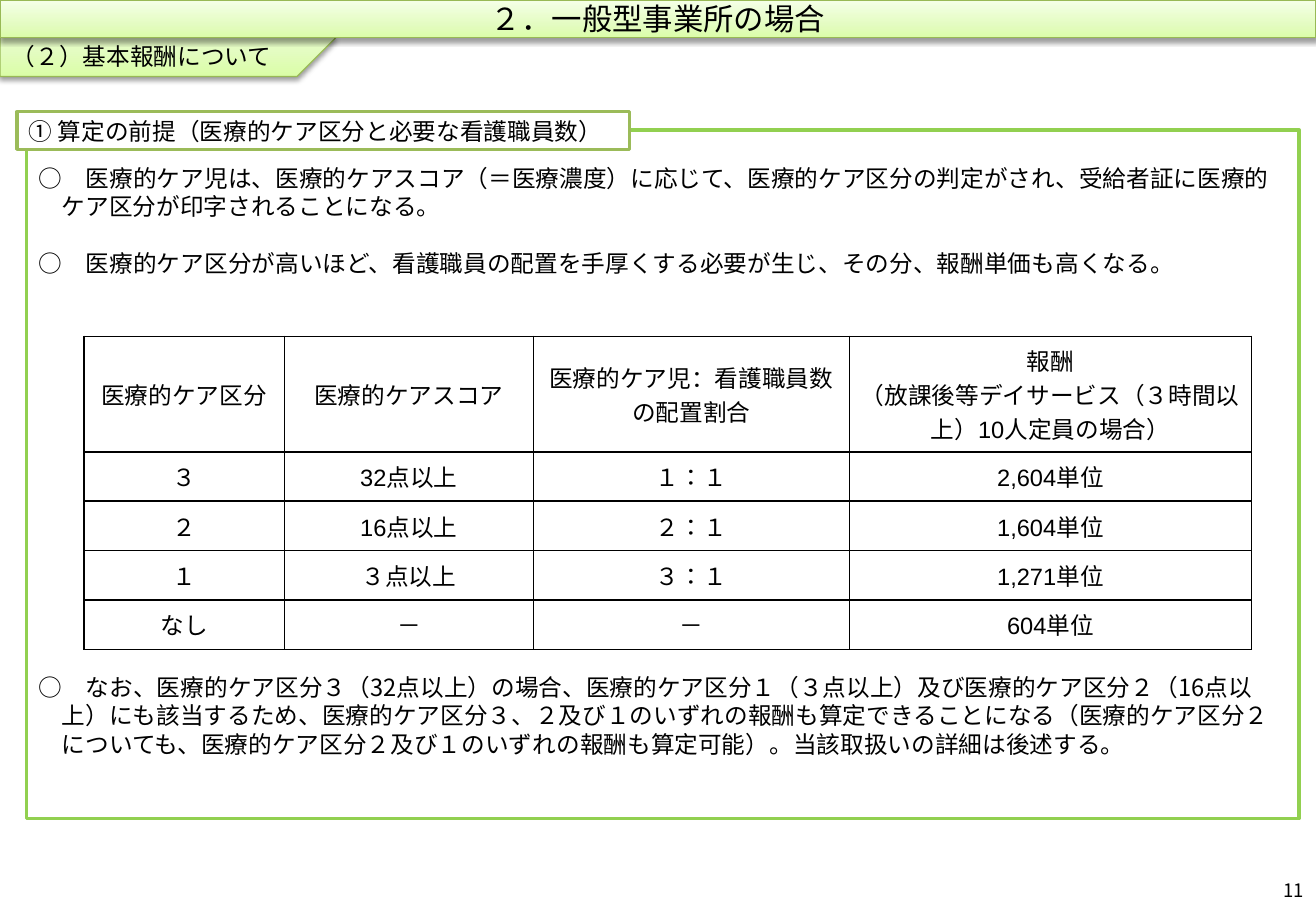
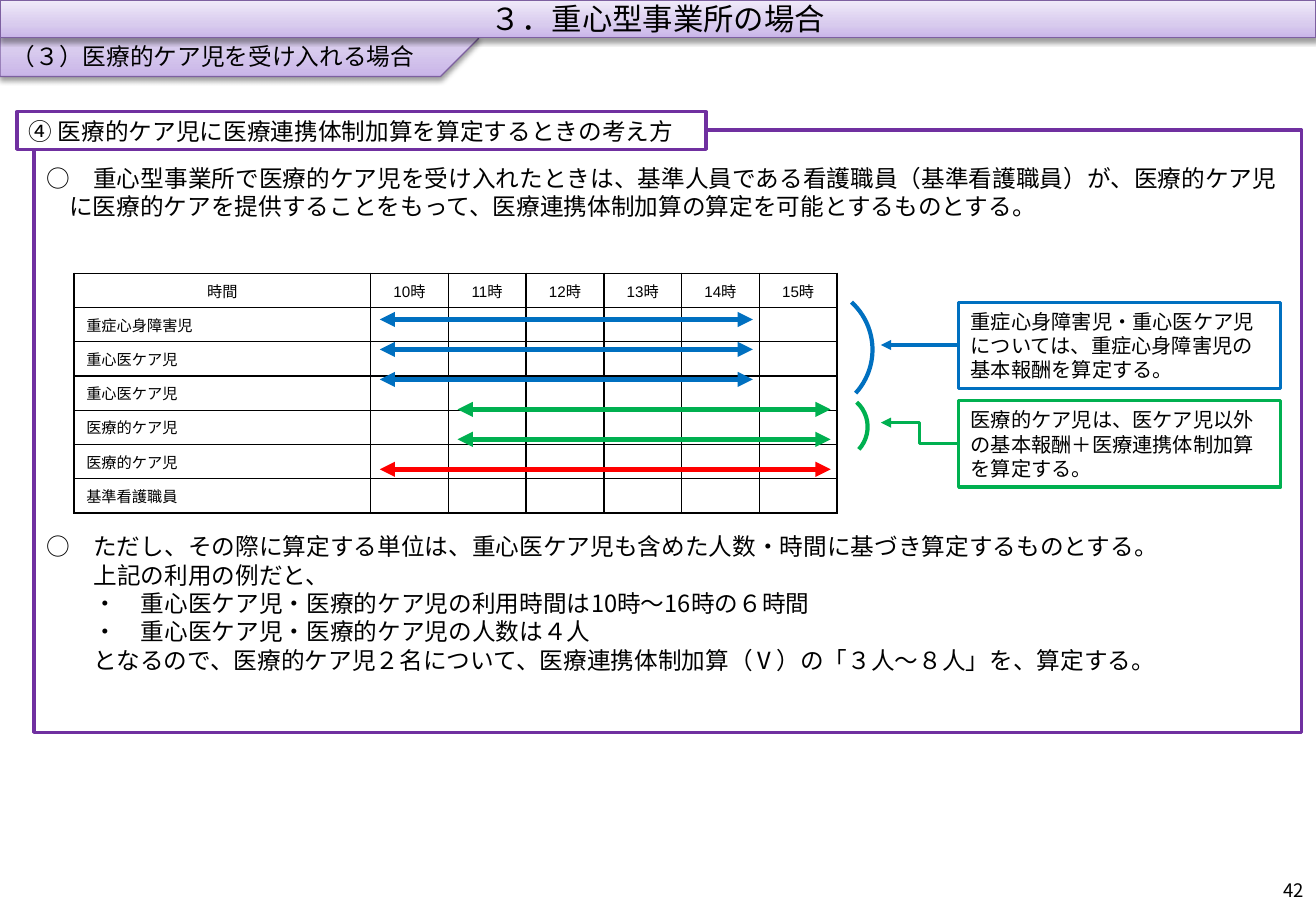
from copy import deepcopy
from lxml.etree import SubElement as Sub
from pptx import Presentation
from pptx.dml.color import RGBColor as RGB
from pptx.enum.shapes import MSO_CONNECTOR as LINK, MSO_SHAPE as FORM
from pptx.enum.text import MSO_ANCHOR as ANCHOR, PP_ALIGN as ALIGN
from pptx.oxml.ns import qn
from pptx.util import Inches, Pt

BLACK = RGB(0x00, 0x00, 0x00)
WHITE = RGB(0xFF, 0xFF, 0xFF)
BLUE = RGB(0x00, 0x70, 0xC0)
GREEN = RGB(0x00, 0xB0, 0x50)
RED = RGB(0xFF, 0x00, 0x00)
LIME = RGB(0x92, 0xD0, 0x50)
OLIVE = RGB(0x9B, 0xBB, 0x59)
PURPLE = RGB(0x70, 0x30, 0xA0)
LEAF = (RGB(0xDA, 0xFD, 0xA7), RGB(0xE4, 0xFC, 0xC2), RGB(0xF5, 0xFF, 0xE7), RGB(0x98, 0xB9, 0x55))
LILAC = (RGB(0xC9, 0xB5, 0xE8), RGB(0xD8, 0xCB, 0xEE), RGB(0xF0, 0xEA, 0xF9), RGB(0x7D, 0x60, 0xA0))
SANS = "Noto Sans CJK JP"
BAR = 4.13


class Deck:
    def __init__(self):
        self.file = Presentation()
        self.file.slide_width = Inches(10.83)
        self.file.slide_height = Inches(7.5)
        self.col = self.file.slide_width / 100
        self.row = self.file.slide_height / 100

    def grid(self, x, y, *size):
        pairs = zip((x, y, *size), (self.col, self.row) * 2)
        return [round(n * unit) for n, unit in pairs]

    def start(self, title, topic, width, theme, page):
        self.slide = self.file.slides.add_slide(self.file.slide_layouts[6])
        self.shapes = self.slide.shapes
        self.band((0, 0, width, 8.4), FORM.PENTAGON, theme, topic, anchor=ANCHOR.BOTTOM)
        self.band((0, 0, 100, BAR), FORM.RECTANGLE, theme, title, size=18, align=ALIGN.CENTER)
        note = self.shapes.add_textbox(*self.grid(76.82, 95.47, 23.18, 4.53))
        self.words(note.text_frame, page, size=11, align=ALIGN.RIGHT)

    def style(self, para, size, font, align, pitch=True):
        para.alignment = align
        if pitch:
            para.line_spacing = Pt(size * 1.2)
        for run in para.runs:
            run.font.size, run.font.name = Pt(size), font
            run.font.color.rgb = BLACK
            Sub(run._r.get_or_add_rPr(), qn("a:ea"), typeface=SANS)

    def words(self, frame, text, size=14, font=SANS, align=ALIGN.LEFT, anchor=ANCHOR.MIDDLE):
        frame.word_wrap = True
        frame.vertical_anchor = anchor
        frame.text = text
        for para in frame.paragraphs:
            self.style(para, size, font, align)

    def shape(self, box, form, line, weight, fill=None):
        item = self.shapes.add_shape(form, *self.grid(*box))
        item.shadow.inherit = False
        item.line.color.rgb, item.line.width = line, Pt(weight)
        if fill is None:
            item.fill.background()
        else:
            item.fill.solid()
            item.fill.fore_color.rgb = fill
        return item

    def band(self, box, form, theme, text, **style):
        low, mid, high, edge = theme
        item = self.shape(box, form, edge, 0.75)
        item.fill.gradient()
        item.fill.gradient_angle = 90
        stops = item._element.spPr.xpath("a:gradFill/a:gsLst")[0]
        stops.insert(1, deepcopy(stops[0]))
        for stop, color, place in zip(item.fill.gradient_stops, (low, mid, high), (0, 0.35, 1)):
            stop.color.rgb, stop.position = color, place
        glow = item._element.spPr.find(qn("a:effectLst"))
        shade = Sub(glow, qn("a:outerShdw"), blurRad="40000", dist="20000", dir="5400000", rotWithShape="0")
        Sub(Sub(shade, qn("a:srgbClr"), val=str(BLACK)), qn("a:alpha"), val="38000")
        self.words(item.text_frame, text, **style)

    def box(self, box, line, text, **style):
        item = self.shape(box, FORM.RECTANGLE, line, 2, WHITE)
        self.words(item.text_frame, text, **style)

    def panel(self, box, line, paras):
        frame = self.shape(box, FORM.RECTANGLE, line, 2).text_frame
        frame.margin_top, frame.margin_bottom = Inches(0.28), Inches(0.08)
        self.words(frame, "\n".join(text for text, *_ in paras), anchor=ANCHOR.TOP)
        for para, (_, left, hang, gap) in zip(frame.paragraphs, paras):
            para.space_before = Pt(gap)
            props = para._p.get_or_add_pPr()
            props.set("marL", str(int(Inches(left))))
            props.set("indent", str(-int(Inches(hang))))

    def table(self, x, y, cols, rows, data, size, pad, first=ALIGN.CENTER):
        spot = self.grid(x, y, sum(cols), sum(rows))
        table = self.shapes.add_table(len(rows), len(cols), *spot).table
        table.first_row = table.horz_banding = False
        for col, width in zip(table.columns, cols):
            col.width = round(width * self.col)
        for row, height in zip(table.rows, rows):
            row.height = round(height * self.row)
        for r, line in enumerate(data):
            for c, text in enumerate(line):
                align = first if r and not c else ALIGN.CENTER
                self.cell(table.cell(r, c), text, size, pad, align)

    def cell(self, cell, text, size, pad, align):
        cell.vertical_anchor = ANCHOR.MIDDLE
        cell.margin_left = cell.margin_right = Inches(pad)
        props = cell._tc.get_or_add_tcPr()
        for side in "LRTB":
            edge = Sub(props, qn("a:ln" + side), w=str(int(Pt(1))))
            Sub(Sub(edge, qn("a:solidFill")), qn("a:srgbClr"), val=str(BLACK))
        cell.fill.solid()
        cell.fill.fore_color.rgb = WHITE
        cell.text_frame.text = text
        for para in cell.text_frame.paragraphs:
            self.style(para, size, "Arial", align, pitch=False)
            if not text:
                para._p.get_or_add_endParaRPr().set("sz", str(size * 100))

    def arrow(self, start, end, color, weight=2, both=False, kind=LINK.STRAIGHT):
        link = self.shapes.add_connector(kind, *self.grid(*start, *end))
        link.line.color.rgb, link.line.width = color, Pt(weight)
        props = link._element.spPr
        for tip in ("headEnd", "tailEnd")[0 if both else 1:]:
            Sub(props.find(qn("a:ln")), qn("a:" + tip), type="triangle")
        Sub(props, qn("a:effectLst"))

    def arc(self, box, color):
        self.shape(box, FORM.ARC, color, 2.5).rotation = 42.4


def basic(deck):
    deck.start("２．一般型事業所の場合", "（２）基本報酬について", 25.48, LEAF, "11")
    deck.panel((2.03, 14.27, 96.68, 75.6), LIME, [
        ("○　医療的ケア児は、医療的ケアスコア（＝医療濃度）に応じて、医療的ケア区分の判定がされ、"
         "受給者証に医療的ケア区分が印字されることになる。", 0.19, 0.19, 0),
        ("○　医療的ケア区分が高いほど、看護職員の配置を手厚くする必要が生じ、その分、報酬単価も高くなる。",
         0.19, 0.19, 16.8),
        ("○　なお、医療的ケア区分３（32点以上）の場合、医療的ケア区分１（３点以上）及び医療的ケア区分２"
         "（16点以上）にも該当するため、医療的ケア区分３、２及び１のいずれの報酬も算定できることになる"
         "（医療的ケア区分２についても、医療的ケア区分２及び１のいずれの報酬も算定可能）。"
         "当該取扱いの詳細は後述する。", 0.19, 0.19, 234.4)])
    deck.box((1.29, 12.27, 46.54, BAR), OLIVE, "① 算定の前提（医療的ケア区分と必要な看護職員数）")
    deck.table(6.37, 36.93, [15.24, 18.93, 24.01, 30.56], [12.67] + [5.42] * 4, [
        ("医療的ケア区分", "医療的ケアスコア", "医療的ケア児：看護職員数\nの配置割合",
         "報酬\n（放課後等デイサービス（３時間以上）10人定員の場合）"),
        ("３", "32点以上", "１：１", "2,604単位"),
        ("２", "16点以上", "２：１", "1,604単位"),
        ("１", "３点以上", "３：１", "1,271単位"),
        ("なし", "－", "－", "604単位")], 14, 0.08)


def severe(deck):
    deck.start("３．重心型事業所の場合", "（３）医療的ケア児を受け入れる場合", 36.38, LILAC, "42")
    deck.panel((2.59, 14.27, 96.31, 66.13), PURPLE, [
        ("○　重心型事業所で医療的ケア児を受け入れたときは、基準人員である看護職員（基準看護職員）が、"
         "医療的ケア児に医療的ケアを提供することをもって、医療連携体制加算の算定を可能とするものとする。",
         0.19, 0.19, 0),
        ("○　ただし、その際に算定する単位は、重心医ケア児も含めた人数・時間に基づき算定するものとする。",
         0.39, 0.39, 184.7),
        ("上記の利用の例だと、", 0.39, 0, 0),
        ("・　重心医ケア児・医療的ケア児の利用時間は10時～16時の６時間", 0.39, 0, 0),
        ("・　重心医ケア児・医療的ケア児の人数は４人", 0.39, 0, 0),
        ("となるので、医療的ケア児２名について、医療連携体制加算（Ⅴ）の「３人～８人」を、算定する。",
         0.39, 0, 0)])
    deck.box((1.29, 12.27, 52.35, BAR), PURPLE, "④ 医療的ケア児に医療連携体制加算を算定するときの考え方")

    left, name, hour = 5.63, 22.53, 5.91
    staff = ["重症心身障害児", "重心医ケア児", "重心医ケア児", "医療的ケア児", "医療的ケア児", "基準看護職員"]
    data = [["時間"] + [f"{h}時" for h in range(10, 16)]] + [[who] + [""] * 6 for who in staff]
    deck.table(left, 30, [name] + [hour] * 6, [3.76] * 7, data, 9, 0.1, ALIGN.LEFT)
    zero = left + name
    spans = [(0, 5, BLUE)] * 3 + [(1, 6, GREEN)] * 2 + [(0, 6, RED)]
    for n, (first, last, color) in enumerate(spans):
        y = 35.07 + 3.29 * n
        deck.arrow((zero + first * hour + 0.7, y), (zero + last * hour - 0.5, y), color, 3, True)

    deck.arc((56.51, 31.33, 9.79, 14.13), BLUE)
    deck.arc((60.85, 43.2, 5.08, 7.33), GREEN)
    notes = [
        (33.2, 37.87, 37.87, BLUE, LINK.STRAIGHT,
         "重症心身障害児・重心医ケア児については、重症心身障害児の基本報酬を算定する。"),
        (44, 48.67, 46.4, GREEN, LINK.ELBOW,
         "医療的ケア児は、医ケア児以外の基本報酬＋医療連携体制加算を算定する。")]
    for top, start, end, color, kind, text in notes:
        deck.box((72.85, top, 24.47, 9.47), color, text, size=12, font="Calibri")
        deck.arrow((72.85, start), (66.94, end), color, kind=kind)


def main():
    deck = Deck()
    basic(deck)
    severe(deck)
    deck.file.save("out.pptx")


if __name__ == "__main__":
    main()
